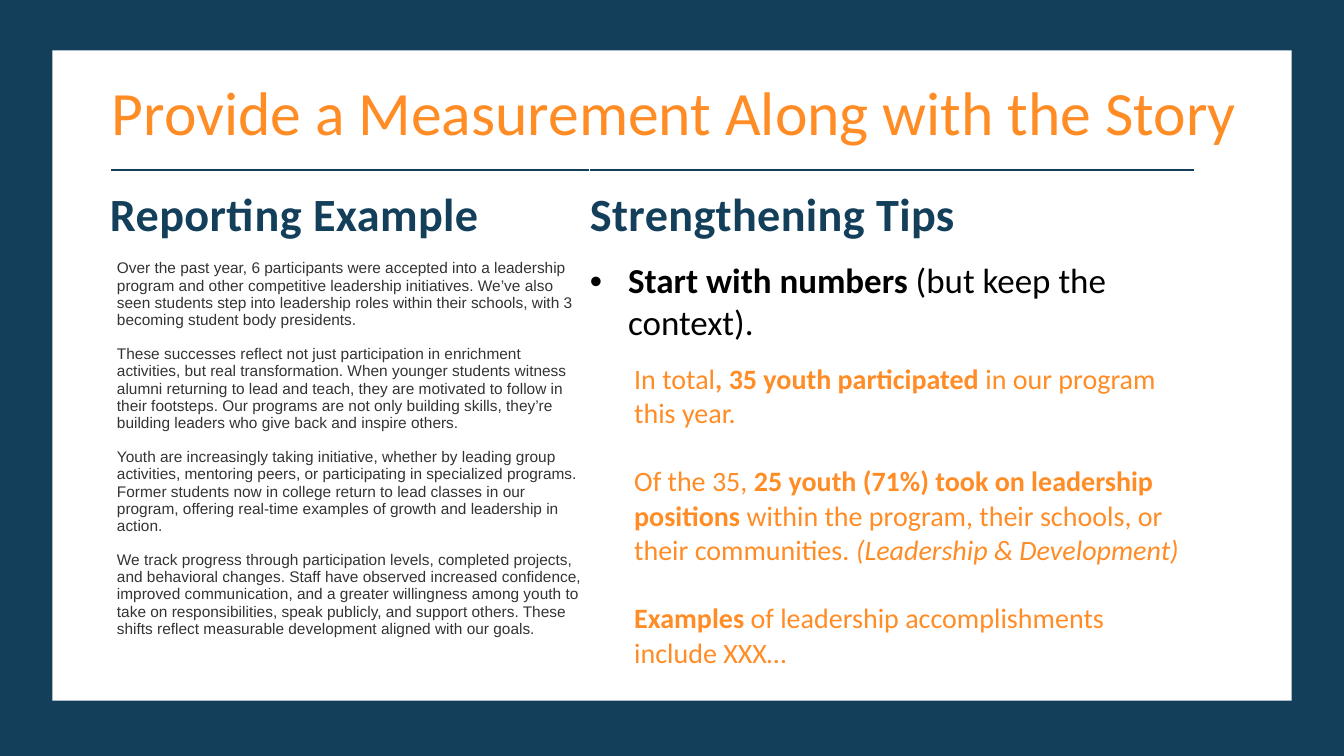
"""Build a slide pairing a reporting example with tips for strengthening it."""
from lxml.etree import SubElement
from pptx import Presentation
from pptx.dml.color import RGBColor
from pptx.enum.shapes import MSO_SHAPE
from pptx.enum.text import MSO_ANCHOR, MSO_AUTO_SIZE, PP_ALIGN
from pptx.oxml.ns import qn
from pptx.util import Inches, Pt

COLORS = {"navy": "143F5B", "heading": "133F5B", "orange": "FF8C25",
          "white": "FFFFFF", "body": "333333", "black": "000000"}

TITLE = "Provide a Measurement Along with the Story"
HEADINGS = ["Reporting Example", "Strengthening Tips"]
STORY = [
    "Over the past year, 6 participants were accepted into a leadership program and other "
    "competitive leadership initiatives. We’ve also seen students step into leadership roles "
    "within their schools, with 3 becoming student body presidents.",
    "These successes reflect not just participation in enrichment activities, but real "
    "transformation. When younger students witness alumni returning to lead and teach, they are "
    "motivated to follow in their footsteps. Our programs are not only building skills, they’re "
    "building leaders who give back and inspire others.",
    "Youth are increasingly taking initiative, whether by leading group activities, mentoring "
    "peers, or participating in specialized programs. Former students now in college return to "
    "lead classes in our program, offering real-time examples of growth and leadership in action.",
    "We track progress through participation levels, completed projects, and behavioral changes. "
    "Staff have observed increased confidence, improved communication, and a greater willingness "
    "among youth to take on responsibilities, speak publicly, and support others. These shifts "
    "reflect measurable development aligned with our goals.",
]
TIP = [("Start with numbers ", "bold"), ("(but keep the context).", "")]
EXAMPLES = [
    [("In total", ""), (", 35 youth participated ", "bold"), ("in our program this year.", "")],
    [("Of the 35, ", ""), ("25 youth (71%) took on leadership positions ", "bold"),
     ("within the program, their schools, or their communities. ", ""),
     ("(Leadership & Development)", "italic")],
    [("Examples", "bold"), (" of leadership accomplishments include XXX…", "")],
]

FORMATS = {
    "title": {"name": "Calibri", "size": Pt(44), "bold": False, "color": "orange"},
    "heading": {"name": "Calibri", "size": Pt(33), "bold": True, "color": "heading"},
    "story": {"name": "Arial", "size": Pt(11), "bold": False, "color": "body"},
    "tip": {"name": "Calibri", "size": Pt(25), "bold": False, "color": "black"},
    "example": {"name": "Calibri", "size": Pt(20), "bold": False, "color": "orange"},
}
PANELS = [((0, 0, 13.33, 7.5), "navy"), ((0.52, 0.5, 12.29, 6.45), "white")]
COLUMN_WIDTHS = [4.76, 6]
ROW_HEIGHTS = [0.89, 4.21]


def rgb(color):
    return RGBColor.from_string(COLORS[color])


def add_runs(paragraph, runs, style):
    for text, emphasis in runs:
        run = paragraph.add_run()
        run.text = text
        for attribute, value in FORMATS[style].items():
            if attribute == "color":
                run.font.color.rgb = rgb(value)
            else:
                setattr(run.font, attribute, value)
        if emphasis:
            setattr(run.font, emphasis, True)
    return paragraph


def set_indent(paragraph, left, first=0, bullet=None):
    properties = paragraph._p.get_or_add_pPr()
    properties.set("marL", str(Inches(left)))
    properties.set("indent", str(Inches(first)))
    if bullet:
        SubElement(properties, qn("a:buFont")).set("typeface", "Arial")
        SubElement(properties, qn("a:buChar")).set("char", bullet)


def set_cell(cell, left, right, anchor):
    cell.fill.background()
    values = {"margin_left": Inches(left), "margin_right": Inches(right),
              "margin_top": 0, "margin_bottom": 0, "vertical_anchor": anchor}
    for attribute, value in values.items():
        setattr(cell, attribute, value)
    return cell.text_frame


def add_top_border(cell, color, width):
    line = SubElement(cell._tc.get_or_add_tcPr(), qn("a:lnT"), w=str(Pt(width)))
    fill = SubElement(line, qn("a:solidFill"))
    SubElement(fill, qn("a:srgbClr"), val=COLORS[color])
    cell._tc.tcPr.insert(0, line)


def add_panels(slide):
    for box, color in PANELS:
        panel = slide.shapes.add_shape(MSO_SHAPE.RECTANGLE, *map(Inches, box))
        panel.shadow.inherit = False
        panel.fill.solid()
        panel.fill.fore_color.rgb = rgb(color)
        panel.line.fill.background()


def add_title(slide):
    title = slide.shapes.title
    box = {"left": 1.01, "top": 0.68, "width": 11.8, "height": 0.84}
    for attribute, value in box.items():
        setattr(title, attribute, Inches(value))
    frame = title.text_frame
    frame.auto_size = MSO_AUTO_SIZE.NONE
    frame.vertical_anchor = MSO_ANCHOR.TOP
    frame.paragraphs[0].alignment = PP_ALIGN.LEFT
    frame.paragraphs[0].line_spacing = 1
    add_runs(frame.paragraphs[0], [(TITLE, "")], "title")
    slide.shapes._spTree.append(title._element)


def add_columns(slide):
    table = slide.shapes.add_table(
        2, 2, Inches(1.09), Inches(1.69),
        Inches(sum(COLUMN_WIDTHS)), Inches(sum(ROW_HEIGHTS))).table
    table.first_row = table.horz_banding = False
    for column, width in zip(table.columns, COLUMN_WIDTHS):
        column.width = Inches(width)
    for row, height in zip(table.rows, ROW_HEIGHTS):
        row.height = Inches(height)

    for index, heading in enumerate(HEADINGS):
        cell = table.cell(0, index)
        frame = set_cell(cell, 0, 0.02, MSO_ANCHOR.MIDDLE)
        paragraph = add_runs(frame.paragraphs[0], [(heading, "")], "heading")
        paragraph.runs[0]._r.get_or_add_rPr().set("spc", "30")
        add_top_border(cell, "navy", 1.5)

    story = set_cell(table.cell(1, 0), 0.07, 0.07, MSO_ANCHOR.TOP)
    for index, text in enumerate(STORY):
        paragraph = story.add_paragraph() if index else story.paragraphs[0]
        if index:
            paragraph.space_before = Pt(12.3)
        add_runs(paragraph, [(text, "")], "story")

    tips = set_cell(table.cell(1, 1), 0, 0.14, MSO_ANCHOR.TOP)
    set_indent(tips.paragraphs[0], 0.38, -0.38, "•")
    add_runs(tips.paragraphs[0], TIP, "tip")
    for index, runs in enumerate(EXAMPLES):
        paragraph = tips.add_paragraph()
        set_indent(paragraph, 0.44)
        paragraph.space_before = Pt(24.4 if index else 12.2)
        add_runs(paragraph, runs, "example")


def main():
    presentation = Presentation()
    presentation.slide_width = Inches(13.33)
    presentation.slide_height = Inches(7.5)
    slide = presentation.slides.add_slide(presentation.slide_layouts[5])
    add_panels(slide)
    add_columns(slide)
    add_title(slide)
    presentation.save("out.pptx")


if __name__ == "__main__":
    main()
